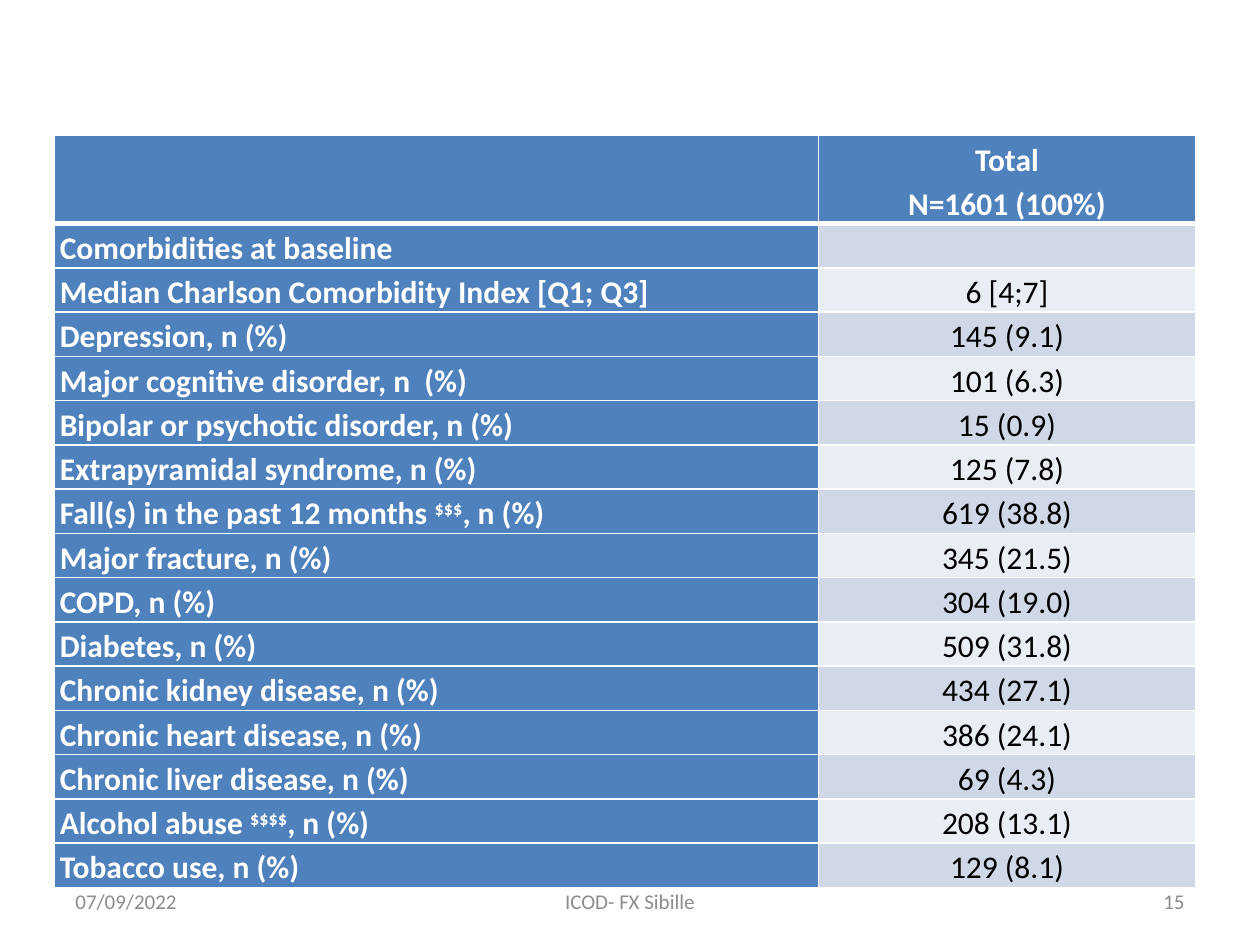
from lxml.etree import SubElement
from pptx import Presentation
from pptx.dml.color import RGBColor
from pptx.enum.text import MSO_ANCHOR, PP_ALIGN
from pptx.oxml.ns import qn
from pptx.util import Pt

COLORS = {"blue": "4F81BD", "band_dark": "D0D8E8", "band_light": "E9EDF4",
          "white": "FFFFFF", "black": "000000", "grey": "8C8C8C"}
ROW_HEIGHT = 25.25

# Label runs with odd positions are superscript
COMORBIDITIES = [
    (["Comorbidities at baseline"], ""),
    (["Median Charlson Comorbidity Index [Q1; Q3]"], "6 [4;7]"),
    (["Depression, n (%)"], "145 (9.1)"),
    (["Major cognitive disorder, n  (%)"], "101 (6.3)"),
    (["Bipolar or psychotic disorder, n (%)"], "15 (0.9)"),
    (["Extrapyramidal syndrome, n (%)"], "125 (7.8)"),
    (["Fall(s) in the past 12 months ", "$$$", ", n (%)"], "619 (38.8)"),
    (["Major fracture, n (%)"], "345 (21.5)"),
    (["COPD, n (%)"], "304 (19.0)"),
    (["Diabetes, n (%)"], "509 (31.8)"),
    (["Chronic kidney disease, n (%)"], "434 (27.1)"),
    (["Chronic heart disease, n (%)"], "386 (24.1)"),
    (["Chronic liver disease, n (%)"], "69 (4.3)"),
    (["Alcohol abuse ", "$$$$", ", n (%)"], "208 (13.1)"),
    (["Tobacco use, n (%)"], "129 (8.1)"),
]


def add_run(paragraph, text, size, color, bold=False):
    run = paragraph.add_run()
    run.text = text
    run.font.name = "Calibri"
    run.font.size = Pt(size)
    run.font.bold = bold
    run.font.color.rgb = RGBColor.from_string(COLORS[color])
    return run


def style_cell(cell, fill, top=1, bottom=1):
    cell.margin_left = cell.margin_right = Pt(3)
    cell.margin_top = cell.margin_bottom = 0
    properties = cell._tc.get_or_add_tcPr()
    for side, width in (("L", 1), ("R", 1), ("T", top), ("B", bottom)):
        line = SubElement(properties, qn(f"a:ln{side}"), w=str(Pt(width)))
        SubElement(SubElement(line, qn("a:solidFill")), qn("a:srgbClr"), val=COLORS["white"])
    cell.fill.solid()
    cell.fill.fore_color.rgb = RGBColor.from_string(COLORS[fill])


prs = Presentation()
prs.slide_width, prs.slide_height = Pt(720), Pt(540)
slide = prs.slides.add_slide(prs.slide_layouts[6])

# Table frame
row_count = len(COMORBIDITIES) + 1
table = slide.shapes.add_table(row_count, 2, Pt(31.2), Pt(77.3), Pt(652),
                               Pt(ROW_HEIGHT * (row_count + 1))).table
table.columns[0].width, table.columns[1].width = Pt(436.5), Pt(215.5)
for row in table.rows:
    row.height = Pt(ROW_HEIGHT)
table.rows[0].height = Pt(2 * ROW_HEIGHT)

# Header row
for column in range(2):
    style_cell(table.cell(0, column), "blue", bottom=3)
total_header = table.cell(0, 1)
total_header.vertical_anchor = MSO_ANCHOR.MIDDLE
total, patients = total_header.text_frame.paragraphs[0], total_header.text_frame.add_paragraph()
total.space_before = Pt(10)
for paragraph, text in ((total, "Total"), (patients, "N=1601 (100%)")):
    paragraph.alignment = PP_ALIGN.CENTER
    paragraph.line_spacing = 1.15
    add_run(paragraph, text, 18, "white", bold=True)

# Comorbidity rows
for index, (label_runs, value) in enumerate(COMORBIDITIES, start=1):
    label_cell, value_cell = table.cell(index, 0), table.cell(index, 1)
    top = 3 if index == 1 else 1
    style_cell(label_cell, "blue", top)
    style_cell(value_cell, "band_dark" if index % 2 else "band_light", top)

    label = label_cell.text_frame.paragraphs[0]
    label.line_spacing = 1.15
    for position, text in enumerate(label_runs):
        run = add_run(label, text, 18, "white", bold=True)
        if position % 2:
            run.font._element.set("baseline", "30000")

    if value:
        count = value_cell.text_frame.paragraphs[0]
        count.alignment = PP_ALIGN.CENTER
        count.line_spacing = 1.15
        add_run(count, value, 18, "black")

# Footer: date, source, page number
for left, width, text, alignment in (
        (36, 168, "07/09/2022", PP_ALIGN.LEFT),
        (246, 228, "ICOD- FX Sibille", PP_ALIGN.CENTER),
        (516, 168, "15", PP_ALIGN.RIGHT)):
    footer = slide.shapes.add_textbox(Pt(left), Pt(500.5), Pt(width), Pt(28.75)).text_frame
    footer.word_wrap = True
    footer.vertical_anchor = MSO_ANCHOR.MIDDLE
    footer.paragraphs[0].alignment = alignment
    add_run(footer.paragraphs[0], text, 12, "grey")

prs.save("out.pptx")
